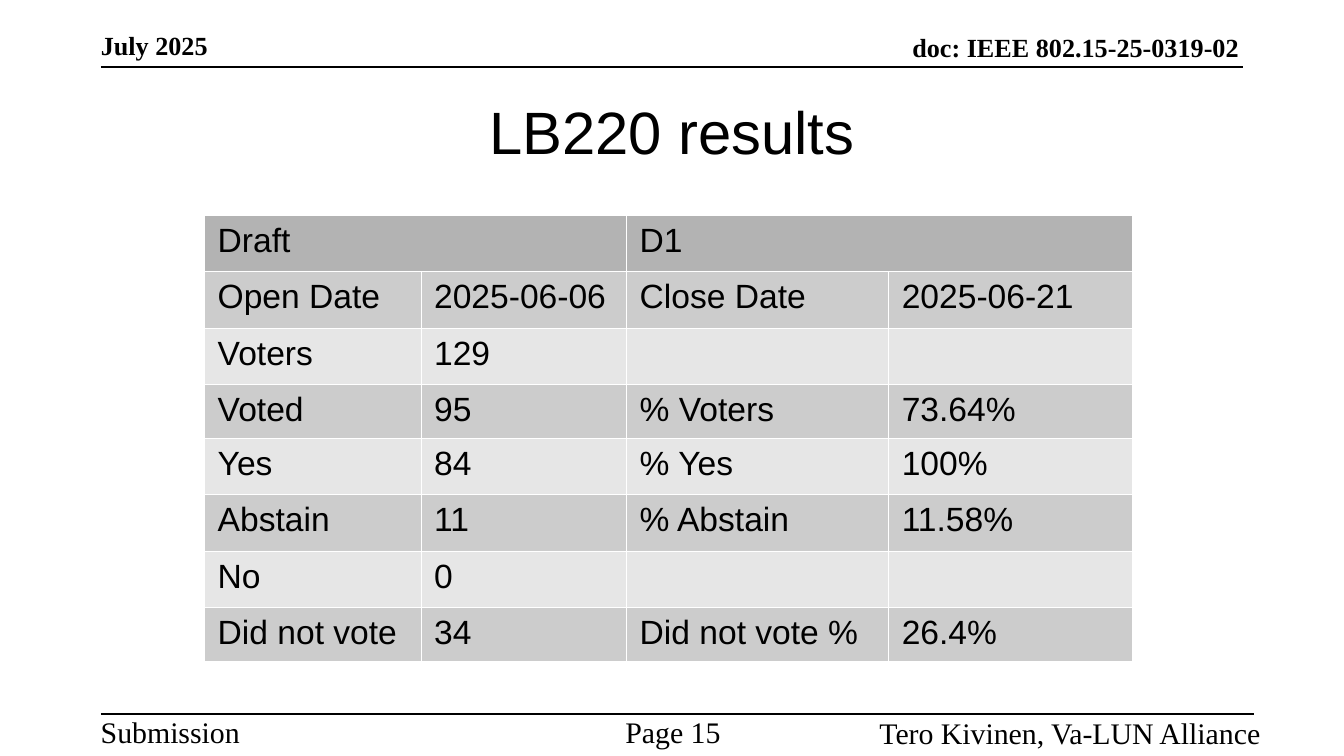
from lxml.etree import SubElement
from pptx import Presentation
from pptx.dml.color import RGBColor
from pptx.enum.shapes import MSO_CONNECTOR
from pptx.enum.text import MSO_ANCHOR, PP_ALIGN
from pptx.oxml.ns import qn
from pptx.util import Inches, Pt

BLACK = RGBColor(0x00, 0x00, 0x00)
WHITE = RGBColor(0xFF, 0xFF, 0xFF)
HEADING_GRAY = RGBColor(0xB3, 0xB3, 0xB3)
DARK_BAND = RGBColor(0xCC, 0xCC, 0xCC)
LIGHT_BAND = RGBColor(0xE6, 0xE6, 0xE6)
SERIF = "Times New Roman"
SANS = "Arial"

RESULTS = [
    ("Draft", "", "D1", ""),
    ("Open Date", "2025-06-06", "Close Date", "2025-06-21"),
    ("Voters", "129", "", ""),
    ("Voted", "95", "% Voters", "73.64%"),
    ("Yes", "84", "% Yes", "100%"),
    ("Abstain", "11", "% Abstain", "11.58%"),
    ("No", "0", "", ""),
    ("Did not vote", "34", "Did not vote %", "26.4%"),
]
COLUMN_WIDTHS = [1.61, 1.53, 1.95, 1.81]
ROW_HEIGHTS = [0.42, 0.42, 0.42, 0.24, 0.42, 0.42, 0.42, 0.38]


def write_text(frame, text, size=16, font=SERIF, bold=False, align=PP_ALIGN.LEFT):
    paragraph = frame.paragraphs[0]
    paragraph.alignment = align
    paragraph.font.size = Pt(size)
    if not text:
        return
    run = paragraph.add_run()
    run.text = text
    run.font.name = font
    run.font.size = Pt(size)
    run.font.bold = bold
    run.font.color.rgb = BLACK


def add_label(slide, text, left, top, width, height, anchor=MSO_ANCHOR.TOP, **text_format):
    label = slide.shapes.add_textbox(Inches(left), Inches(top), Inches(width), Inches(height))
    frame = label.text_frame
    frame.word_wrap = True
    frame.vertical_anchor = anchor
    frame.margin_left = frame.margin_right = frame.margin_top = frame.margin_bottom = 0
    write_text(frame, text, **text_format)


def add_rule(slide, left, top, width):
    rule = slide.shapes.add_connector(
        MSO_CONNECTOR.STRAIGHT, Inches(left), Inches(top), Inches(left + width), Inches(top))
    rule.line.color.rgb = BLACK
    rule.line.width = Pt(1)
    SubElement(rule.element.spPr, qn("a:effectLst"))


def add_header(slide, left, top, width, height):
    heading = dict(anchor=MSO_ANCHOR.BOTTOM, size=14, bold=True)
    add_label(slide, "July 2025", left, top, 2.79, 0.15, **heading)
    add_label(slide, "doc: IEEE 802.15-25-0319-02", left + 2.64, top + 0.02, 5.83, 0.15,
              align=PP_ALIGN.RIGHT, **heading)
    add_rule(slide, left, top + height, width)


def add_footer(slide, left, top, width):
    add_rule(slide, left, top, width)
    add_label(slide, "Submission", left, top, 1.87, 0.23)
    add_label(slide, "Page 15 ", left + 3.35, top, 1.87, 0.23, align=PP_ALIGN.CENTER)
    add_label(slide, "Tero Kivinen, Va-LUN Alliance", left + 4.96, top + 0.01, 3.67, 0.23,
              align=PP_ALIGN.RIGHT)


def add_borders(cell):
    properties = cell._tc.get_or_add_tcPr()
    for index, side in enumerate(("a:lnL", "a:lnR", "a:lnT", "a:lnB")):
        border = SubElement(properties, qn(side), w=str(Pt(0.06)))
        color = SubElement(SubElement(border, qn("a:solidFill")), qn("a:srgbClr"))
        color.set("val", str(WHITE))
        properties.insert(index, border)


def add_results(slide, left, top):
    results = slide.shapes.add_table(
        len(RESULTS), len(COLUMN_WIDTHS), Inches(left), Inches(top),
        Inches(sum(COLUMN_WIDTHS)), Inches(3.3)).table
    for column, width in zip(results.columns, COLUMN_WIDTHS):
        column.width = Inches(width)
    for row, height in zip(results.rows, ROW_HEIGHTS):
        row.height = Inches(height)
    for first in (0, 2):
        results.cell(0, first).merge(results.cell(0, first + 1))
    for row_index, values in enumerate(RESULTS):
        band = DARK_BAND if row_index % 2 else LIGHT_BAND
        for column_index, value in enumerate(values):
            cell = results.cell(row_index, column_index)
            cell.fill.solid()
            cell.fill.fore_color.rgb = band if row_index else HEADING_GRAY
            add_borders(cell)
            write_text(cell.text_frame, value, size=18, font=SANS)


def main():
    deck = Presentation()
    deck.slide_width = Inches(10)
    deck.slide_height = Inches(10 * 9 / 16)
    slide = deck.slides.add_slide(deck.slide_layouts[6])
    add_header(slide, 0.75, 0.3, 8.5, 0.2)
    add_footer(slide, 0.75, 5.31, 8.58)
    add_label(slide, "LB220 results", 0.5, 0.5, 9, 0.94, anchor=MSO_ANCHOR.MIDDLE,
              size=32, font=SANS, align=PP_ALIGN.CENTER)
    add_results(slide, 1.52, 1.6)
    deck.save("out.pptx")


if __name__ == "__main__":
    main()
